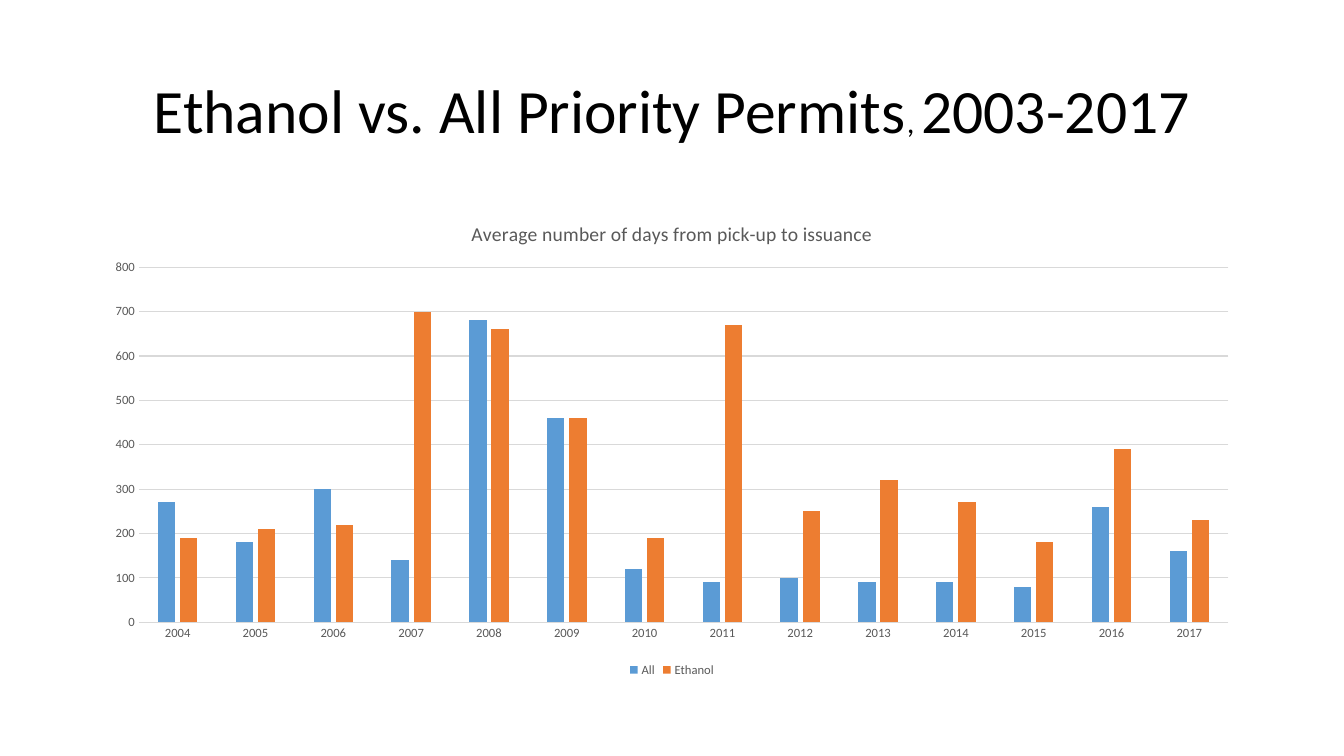
from dataclasses import dataclass

from lxml.etree import SubElement
from pptx import Presentation
from pptx.chart.data import CategoryChartData
from pptx.dml.color import RGBColor
from pptx.enum.chart import XL_CHART_TYPE, XL_LEGEND_POSITION, XL_TICK_MARK
from pptx.enum.text import MSO_ANCHOR, PP_ALIGN
from pptx.oxml.ns import qn
from pptx.util import Cm, Pt


@dataclass(frozen=True)
class Theme:
    font: str = "Calibri"
    ink: str = "000000"
    muted: str = "595959"
    grid: str = "D9D9D9"
    series: tuple = ("5B9BD5", "ED7D31")
    heading_size: float = 44
    comma_size: float = 22
    chart_title_size: float = 14
    chart_size: float = 10
    label_size: float = 9
    line_width: float = 0.75


class SlideBuilder:
    def __init__(self, page, theme):
        self.page = page
        self.theme = theme

    def style_font(self, font, size, color):
        font.name = self.theme.font
        font.size = Pt(size)
        font.bold = False
        font.color.rgb = RGBColor.from_string(color)

    def style_line(self, line):
        line.color.rgb = RGBColor.from_string(self.theme.grid)
        line.width = Pt(self.theme.line_width)

    def add_heading(self, spans, left, top, width, height):
        """Add a centred heading from (text, size) pairs."""
        box = self.page.shapes.add_textbox(Cm(left), Cm(top), Cm(width), Cm(height))
        frame = box.text_frame
        frame.word_wrap = True
        frame.vertical_anchor = MSO_ANCHOR.MIDDLE
        para = frame.paragraphs[0]
        para.alignment = PP_ALIGN.CENTER
        para.line_spacing = 0.9
        for text, size in spans:
            span = para.add_run()
            span.text = text
            self.style_font(span.font, size, self.theme.ink)

    def add_column_chart(self, title, years, series, left, top, width, height):
        data = CategoryChartData()
        data.categories = years
        for name, values in series.items():
            data.add_series(name, values)
        chart = self.page.shapes.add_chart(
            XL_CHART_TYPE.COLUMN_CLUSTERED,
            Cm(left), Cm(top), Cm(width), Cm(height), data,
        ).chart
        self.style_font(chart.font, self.theme.chart_size, self.theme.ink)
        self.style_columns(chart.plots[0])
        self.style_axes(chart)
        self.add_chart_title(chart, title)
        self.add_legend(chart)
        self.place_plot(chart, x=0.04, y=0.137, w=0.94, h=0.74)

    def style_columns(self, plot):
        plot.gap_width = 219
        plot.overlap = -27
        plot.vary_by_categories = False
        for columns, color in zip(plot.series, self.theme.series):
            columns.format.fill.solid()
            columns.format.fill.fore_color.rgb = RGBColor.from_string(color)
            columns.invert_if_negative = False

    def style_axes(self, chart):
        for axis in (chart.category_axis, chart.value_axis):
            axis.major_tick_mark = XL_TICK_MARK.NONE
            axis.minor_tick_mark = XL_TICK_MARK.NONE
            self.style_font(axis.tick_labels.font, self.theme.label_size, self.theme.muted)
        self.style_line(chart.category_axis.format.line)
        scale = chart.value_axis
        scale.minimum_scale, scale.maximum_scale, scale.major_unit = 0, 800, 100
        scale.format.line.fill.background()
        scale.has_major_gridlines = True
        self.style_line(scale.major_gridlines.format.line)

    def add_chart_title(self, chart, title):
        chart.has_title = True
        span = chart.chart_title.text_frame.paragraphs[0].add_run()
        span.text = title
        self.style_font(span.font, self.theme.chart_title_size, self.theme.muted)
        chart.chart_title.include_in_layout = False

    def add_legend(self, chart):
        chart.has_legend = True
        chart.legend.position = XL_LEGEND_POSITION.BOTTOM
        chart.legend.include_in_layout = False
        self.style_font(chart.legend.font, self.theme.label_size, self.theme.muted)

    def place_plot(self, chart, **fractions):
        """Fix the inner plot area as fractions of the chart frame."""
        area = chart.plots[0]._element.getparent()
        layout = area.find(qn("c:layout"))
        if layout is None:
            layout = SubElement(area, qn("c:layout"))
            area.insert(0, layout)
        manual = SubElement(layout, qn("c:manualLayout"))
        settings = {"layoutTarget": "inner", "xMode": "edge", "yMode": "edge", **fractions}
        for tag, value in settings.items():
            SubElement(manual, qn(f"c:{tag}")).set("val", str(value))


def main():
    theme = Theme()
    deck = Presentation()
    deck.slide_width, deck.slide_height = Cm(33.87), Cm(19.05)
    builder = SlideBuilder(deck.slides.add_slide(deck.slide_layouts[6]), theme)

    margin, content_width = 2.33, 29.21
    builder.add_heading(
        [
            ("Ethanol vs. All Priority Permits", theme.heading_size),
            (", ", theme.comma_size),
            ("2003-2017", theme.heading_size),
        ],
        margin, 1.02, content_width, 3.68,
    )
    builder.add_column_chart(
        "Average number of days from pick-up to issuance",
        [str(year) for year in range(2004, 2018)],
        {
            "All": [270, 180, 300, 140, 680, 460, 120, 90, 100, 90, 90, 80, 260, 160],
            "Ethanol": [190, 210, 220, 700, 660, 460, 190, 670, 250, 320, 270, 180, 390, 230],
        },
        margin, 5.08, content_width, 12.09,
    )
    deck.save("out.pptx")


if __name__ == "__main__":
    main()
